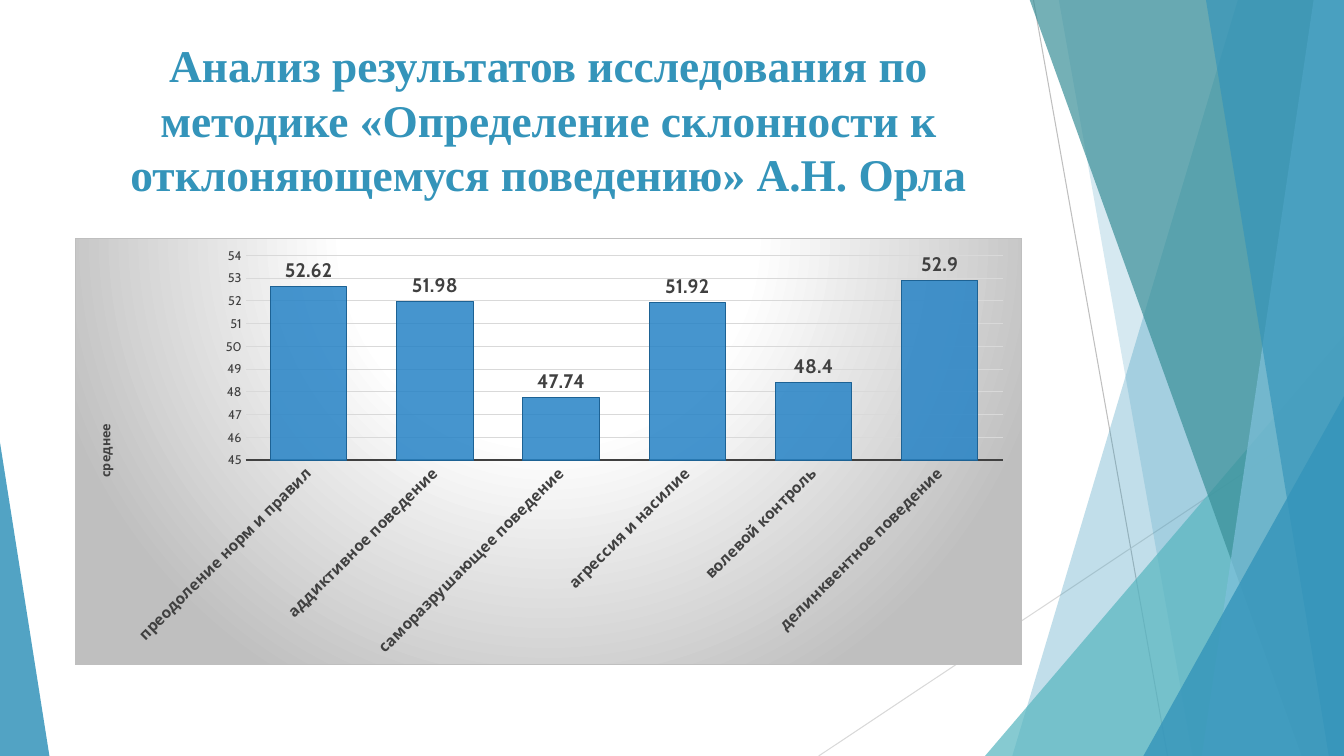
from lxml import etree
from pptx import Presentation
from pptx.chart.data import CategoryChartData
from pptx.dml.color import RGBColor
from pptx.enum.chart import XL_CHART_TYPE as CT, XL_LABEL_POSITION as LP, XL_TICK_MARK as TM
from pptx.enum.shapes import MSO_CONNECTOR as MC, MSO_SHAPE as MS
from pptx.enum.text import MSO_ANCHOR as MA, MSO_AUTO_SIZE as AS, PP_ALIGN as PA
from pptx.oxml import parse_xml
from pptx.oxml.ns import nsdecls, qn
from pptx.util import Inches, Pt


def paint(fmt, color, alpha=100):
    fmt.solid()
    fmt.fore_color.rgb = RGBColor.from_string(color)
    if alpha < 100:
        clr = fmt._xPr.find(qn("a:solidFill"))[0]
        etree.SubElement(clr, qn("a:alpha")).set("val", str(alpha * 1000))


def style(font, color, **values):
    for name, value in values.items():
        setattr(font, name, value)
    paint(font.fill, color)


prs = Presentation()
prs.slide_width, prs.slide_height = Inches(13.33), Inches(7.5)
s = prs.slides.add_slide(prs.slide_layouts[5])

for x1, y1, x2, y2, color in [
    (10.25, 0, 11.58, 7.5, "BFBFBF"),
    (13.33, 4.03, 8.12, 7.5, "D9D9D9"),
]:
    line = s.shapes.add_connector(MC.STRAIGHT, *map(Inches, (x1, y1, x2, y2)))
    paint(line.line.fill, color)
    line.line.width = Pt(0.75)
    etree.SubElement(line._element.spPr, qn("a:effectLst"))

bands = [
    ("band", (12.28, 10.04), "3494BA", 30),
    ("band", (10.5, 11.83), "3494BA", 20),
    ("triangle", (9.77, 3.33, 3.56, 4.17, 1), "58B6C0", 72),
    ("band", (10.21, 12.91), "3A8F98", 70),
    ("band", (13.03, 11.92), "7FC1DB", 70),
    ("band", (11.96, 13.18), "3494BA", 65),
    ("triangle", (11.34, 3.93, 1.99, 3.57, 1), "3494BA", 80),
    ("triangle", (0, 4.39, 0.49, 3.11, 0), "3494BA", 85),
]
for kind, geom, color, alpha in bands:
    if kind == "band":
        top, bottom = geom
        path = s.shapes.build_freeform(Inches(top), Inches(-0.01))
        corners = [(13.33, -0.01), (13.33, 7.5), (bottom, 7.5)]
        path.add_line_segments([(Inches(x), Inches(y)) for x, y in corners])
        sp = path.convert_to_shape()
    else:
        sp = s.shapes.add_shape(MS.ISOSCELES_TRIANGLE, *map(Inches, geom[:4]))
        sp.adjustments[0] = geom[4]
    paint(sp.fill, color, alpha)
    sp.line.fill.background()
    sp.shadow.inherit = False

title = s.shapes.title
box = {"left": 0.74, "top": 0.32, "width": 9.4, "height": 1.79}
for name, value in box.items():
    setattr(title, name, Inches(value))
tf = title.text_frame
for name, value in {"word_wrap": True, "auto_size": AS.NONE, "vertical_anchor": MA.TOP}.items():
    setattr(tf, name, value)
p = tf.paragraphs[0]
p.alignment = PA.CENTER
r = p.add_run()
r.text = "Анализ результатов исследования по методике «Определение склонности к отклоняющемуся поведению» А.Н. Орла"
style(r.font, "3494BA", name="Times New Roman", size=Pt(32.4), bold=True)
s.shapes._spTree.append(title._element)

data = CategoryChartData()
data.categories = [
    "преодоление норм и правил", "аддиктивное поведение", "саморазрушающее поведение",
    "агрессия и насилие", "волевой контроль", "делинквентное поведение",
]
data.add_series("Series 1", [52.62, 51.98, 47.74, 51.92, 48.4, 52.9])
frame = s.shapes.add_chart(CT.COLUMN_CLUSTERED, *map(Inches, (0.74, 2.36, 9.4, 4.24)), data)
chart = frame.chart
chart.has_legend = chart.has_title = False
style(chart.font, "000000", name="Cabin", size=Pt(10))

cat, val = chart.category_axis, chart.value_axis
for axis in (cat, val):
    axis.major_tick_mark = axis.minor_tick_mark = TM.NONE
style(cat.tick_labels.font, "404040", name="Cabin", size=Pt(11), bold=True)
cat._element.find(qn("c:txPr")).find(qn("a:bodyPr")).set("rot", "-2700000")
paint(cat.format.line.fill, "404040")
cat.format.line.width = Pt(1.5)

for name, value in {"minimum_scale": 45, "maximum_scale": 54, "major_unit": 1}.items():
    setattr(val, name, value)
style(val.tick_labels.font, "404040", name="Cabin", size=Pt(9))
val.format.line.fill.background()
grid = val.major_gridlines.format.line
paint(grid.fill, "D9D9D9")
grid.width = Pt(0.75)
tf = val.axis_title.text_frame
tf.text = "среднее"
tf._txBody.bodyPr.set("rot", "-5400000")
tf._txBody.bodyPr.set("vert", "horz")
style(tf.paragraphs[0].runs[0].font, "404040", name="Cabin", size=Pt(9), bold=True)

plot = chart.plots[0]
plot.gap_width = 65
plot.vary_by_categories = False
bars = plot.series[0]
paint(bars.format.fill, "2683C6", 85)
paint(bars.format.line.fill, "1D6294")
bars.format.line.width = Pt(0.75)
labels = bars.data_labels
labels.show_value = True
labels.position = LP.OUTSIDE_END
style(labels.font, "404040", name="Cabin", size=Pt(14), bold=True)

layouts = [
    (chart._chartSpace.chart.plotArea, {"layoutTarget": "inner", "xMode": "edge", "yMode": "edge",
                                        "x": 0.18, "y": 0.04, "w": 0.8, "h": 0.48}),
    (val.axis_title._element, {"xMode": "edge", "yMode": "edge", "x": 0.02, "y": 0.43}),
]
for parent, values in layouts:
    for old in parent.findall(qn("c:layout")):
        parent.remove(old)
    layout = etree.Element(qn("c:layout"))
    manual = etree.SubElement(layout, qn("c:manualLayout"))
    for name, value in values.items():
        etree.SubElement(manual, qn("c:" + name)).set("val", str(value))
    text = parent.find(qn("c:tx"))
    parent.insert(0 if text is None else 1, layout)

stops = "".join(
    f'<a:gs pos="{pos * 1000}"><a:srgbClr val="{color}"/></a:gs>'
    for pos, color in [(0, "FFFFFF"), (39, "FFFFFF"), (100, "BFBFBF")]
)
chart._chartSpace.chart.addnext(parse_xml(
    f'<c:spPr {nsdecls("c", "a")}><a:gradFill>'
    f'<a:gsLst>{stops}</a:gsLst><a:path path="circle">'
    '<a:fillToRect l="50000" t="-80000" r="50000" b="180000"/></a:path></a:gradFill>'
    '<a:ln w="9525"><a:solidFill><a:srgbClr val="BFBFBF"/></a:solidFill></a:ln></c:spPr>'
))

prs.save("out.pptx")
